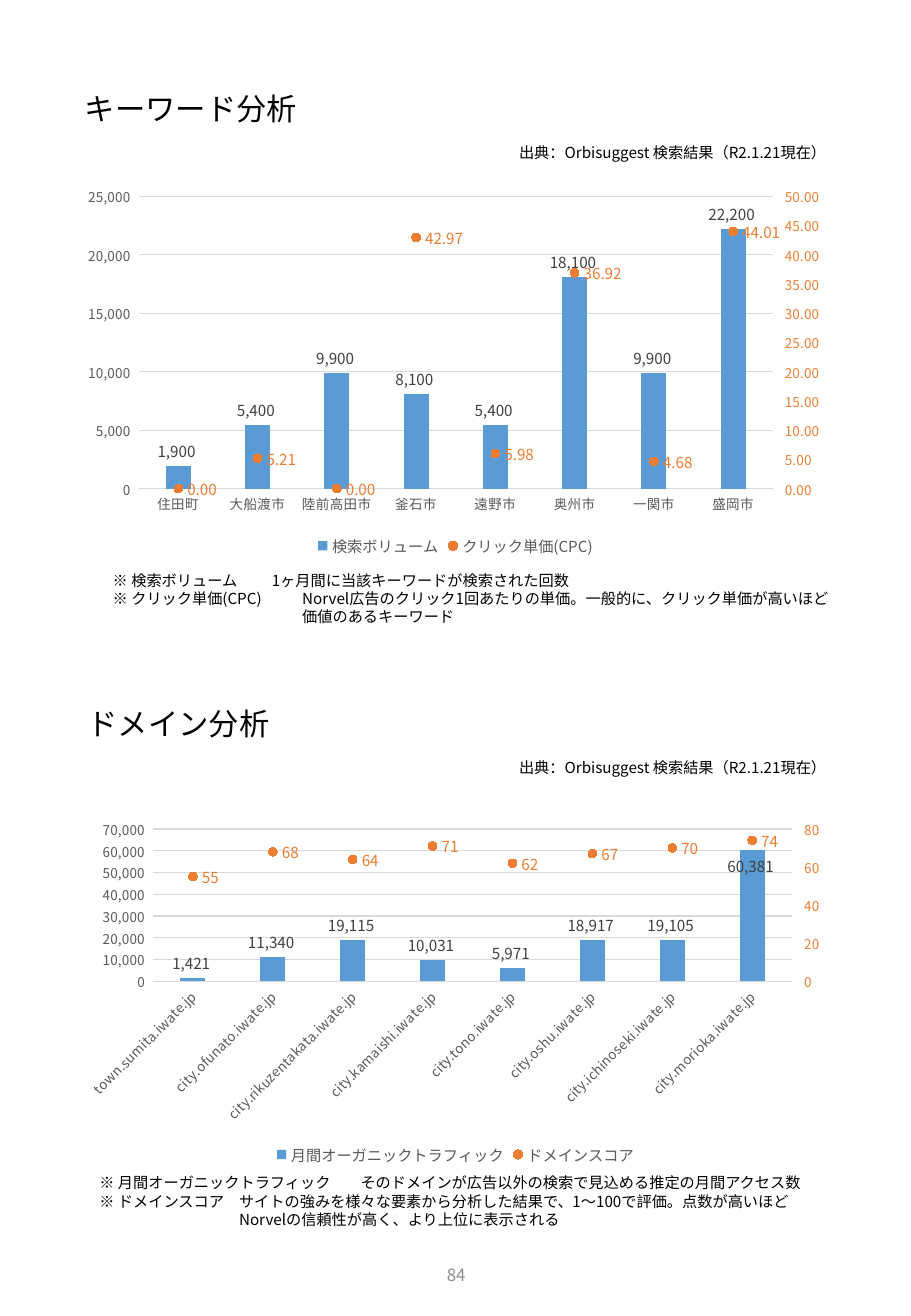
from lxml.etree import SubElement
from pptx import Presentation
from pptx.chart.axis import ValueAxis
from pptx.chart.data import CategoryChartData as Data
from pptx.dml.color import RGBColor
from pptx.enum.chart import XL_CHART_TYPE as Kind, XL_LABEL_POSITION as Spot
from pptx.enum.chart import XL_LEGEND_POSITION as Side, XL_MARKER_STYLE as Mark
from pptx.enum.chart import XL_TICK_MARK as Tick
from pptx.enum.text import MSO_ANCHOR as Anchor, MSO_AUTO_SIZE as Auto, PP_ALIGN as Align
from pptx.oxml import parse_xml
from pptx.oxml.ns import nsdecls, qn
from pptx.util import Pt

PX = 9144
FACE = "Noto Sans CJK JP"
BLACK = RGBColor(0, 0, 0)
DARK = RGBColor(0x40, 0x40, 0x40)
GREY = RGBColor(0x59, 0x59, 0x59)
PALE = RGBColor(0xD9, 0xD9, 0xD9)
FAINT = RGBColor(0x8C, 0x8C, 0x8C)
BLUE = RGBColor(0x5B, 0x9B, 0xD5)
ORANGE = RGBColor(0xED, 0x7D, 0x31)
WHOLE = r"#,##0_);[Red]\(#,##0\)"
CENTS = r"#,##0.00_);[Red]\(#,##0.00\)"
SOURCE = "出典：Orbisuggest 検索結果（R2.1.21現在）"

PARTS = [
    dict(
        title="キーワード分析", head=(60, 70, 630, 43), cite=(402, 113, 288, 26),
        plot=(60, 147, 630, 315), foot=(83, 465, 640, 57),
        cats=["住田町", "大船渡市", "陸前高田市", "釜石市", "遠野市", "奥州市", "一関市", "盛岡市"],
        bars=("検索ボリューム", [1900, 5400, 9900, 8100, 5400, 18100, 9900, 22200]),
        dots=("クリック単価(CPC)", [0, 5.21, 0, 42.97, 5.98, 36.92, 4.68, 44.01]),
        left=(25000, 5000), right=(50, 5), form=CENTS, turn=0, inner=[],
        notes=[
            (131, "※ 検索ボリューム\t1ヶ月間に当該キーワードが検索された回数"),
            (156, "※ クリック単価(CPC)\tNorvel広告のクリック1回あたりの単価。"
                  "一般的に、クリック単価が高いほど\v\t価値のあるキーワード"),
        ],
    ),
    dict(
        title="ドメイン分析", head=(62, 576, 630, 43), cite=(402, 619, 288, 26),
        plot=(60, 668, 630, 295), foot=(72, 961, 640, 57),
        cats=["town.sumita.iwate.jp", "city.ofunato.iwate.jp", "city.rikuzentakata.iwate.jp",
              "city.kamaishi.iwate.jp", "city.tono.iwate.jp", "city.oshu.iwate.jp",
              "city.ichinoseki.iwate.jp", "city.morioka.iwate.jp"],
        bars=("月間オーガニックトラフィック",
              [1421, 11340, 19115, 10031, 5971, 18917, 19105, 60381]),
        dots=("ドメインスコア", [55, 68, 64, 71, 62, 67, 70, 74]),
        left=(70000, 10000), right=(80, 20), form=WHOLE, turn=-45, inner=[7],
        notes=[
            (215, "※ 月間オーガニックトラフィック\tそのドメインが広告以外の検索で見込める推定の月間アクセス数"),
            (115, "※ ドメインスコア\tサイトの強みを様々な要素から分析した結果で、1～100で評価。"
                  "点数が高いほど\v\tNorvelの信頼性が高く、より上位に表示される"),
        ],
    ),
]

LINE = f"""<c:lineChart {nsdecls('c')}><c:grouping val="standard"/><c:varyColors val="0"/>
<c:marker val="1"/><c:axId val="501"/><c:axId val="502"/></c:lineChart>"""
BASE = f"""<c:catAx {nsdecls('c')}><c:axId val="501"/><c:scaling><c:orientation val="minMax"/>
</c:scaling><c:delete val="1"/><c:axPos val="b"/><c:crossAx val="502"/>
<c:crosses val="autoZero"/></c:catAx>"""
RIGHT = f"""<c:valAx {nsdecls('c')}><c:axId val="502"/><c:scaling><c:orientation val="minMax"/>
</c:scaling><c:delete val="0"/><c:axPos val="r"/><c:majorTickMark val="out"/>
<c:minorTickMark val="none"/><c:tickLblPos val="nextTo"/><c:crossAx val="501"/>
<c:crosses val="max"/></c:valAx>"""


def fit(item, **vals):
    """Set each named value on the item."""
    for key, val in vals.items():
        setattr(item, key, val)


def ink(font, size, color):
    """Set face, size and colour of a font."""
    fit(font, name=FACE, size=Pt(size), bold=False)
    font.color.rgb = color
    SubElement(font._rPr, qn("a:ea")).set("typeface", FACE)


def place(shape, box):
    """Move a shape to a box in px."""
    fit(shape, **{k: v * PX for k, v in zip(("left", "top", "width", "height"), box)})


def write(shape, box, rows, size, color=BLACK, align=Align.LEFT, anchor=Anchor.TOP, gap=1.0):
    """Fill a shape with (tab stop, text) rows."""
    place(shape, box)
    frame = shape.text_frame
    fit(frame, word_wrap=True, auto_size=Auto.NONE, vertical_anchor=anchor)
    frame.text = "\n".join(text for _, text in rows)
    for para, (stop, _) in zip(frame.paragraphs, rows):
        fit(para, alignment=align, line_spacing=gap)
        if stop:
            tabs = SubElement(para._p.get_or_add_pPr(), qn("a:tabLst"))
            tab = SubElement(tabs, qn("a:tab"))
            tab.set("pos", str(stop * PX))
            tab.set("algn", "l")
        for run in para.runs:
            ink(run.font, size, color)


def scale(axis, span, form, color):
    """Format a value axis."""
    top, step = span
    fit(axis, minimum_scale=0, maximum_scale=top, major_unit=step)
    fit(axis.tick_labels, number_format=form, number_format_is_linked=False)
    ink(axis.tick_labels.font, 8, color)
    axis.format.line.fill.background()


def label(series, form, color, spot):
    """Show the values of a series."""
    tags = series.data_labels
    fit(tags, show_value=True, number_format=form, number_format_is_linked=False, position=spot)
    ink(tags.font, 9, color)


def draw(slide, part):
    """Add a column chart with dots on a second axis."""
    data = Data(number_format=WHOLE)
    data.categories = part["cats"]
    data.add_series(*part["bars"])
    data.add_series(*part["dots"], number_format=part["form"])
    box = [n * PX for n in part["plot"]]
    chart = slide.shapes.add_chart(Kind.COLUMN_CLUSTERED, *box, data).chart
    fit(chart, has_title=False, has_legend=True)
    fit(chart.legend, position=Side.BOTTOM, include_in_layout=False)
    ink(chart.font, 10, BLACK)
    ink(chart.legend.font, 9, GREY)

    cat, val = chart.category_axis, chart.value_axis
    fit(cat, major_tick_mark=Tick.NONE)
    fit(val, major_tick_mark=Tick.NONE, has_major_gridlines=True)
    ink(cat.tick_labels.font, 8, GREY)
    for line in (cat.format.line, val.major_gridlines.format.line):
        line.color.rgb = PALE
        line.width = Pt(0.75)
    scale(val, part["left"], WHOLE, GREY)
    root = chart._chartSpace
    if part["turn"]:
        body = root.xpath(".//c:catAx/c:txPr/a:bodyPr")[0]
        body.set("rot", str(part["turn"] * 60000))

    group = root.xpath(".//c:barChart")[0]
    moved = group.findall(qn("c:ser"))[1]
    for flag in moved.findall(qn("c:invertIfNegative")):
        moved.remove(flag)
    dots = parse_xml(LINE)
    dots.insert(2, moved)
    group.addnext(dots)
    last = root.xpath(".//c:valAx")[0]
    right = parse_xml(RIGHT)
    last.addnext(right)
    right.addnext(parse_xml(BASE))
    scale(ValueAxis(right), part["right"], part["form"], ORANGE)

    cols, line = chart.plots
    fit(cols, gap_width=219, overlap=-27, vary_by_categories=False)
    bar, dot = cols.series[0], line.series[0]
    bar.format.fill.solid()
    bar.format.fill.fore_color.rgb = BLUE
    label(bar, WHOLE, DARK, Spot.OUTSIDE_END)
    for spot in part["inner"]:
        tag = bar.points[spot].data_label
        ink(tag.font, 9, DARK)
        tag.position = Spot.INSIDE_END
    dot.smooth = False
    dot.format.line.fill.background()
    fit(dot.marker, style=Mark.CIRCLE, size=5)
    dot.marker.format.fill.solid()
    dot.marker.format.fill.fore_color.rgb = ORANGE
    dot.marker.format.line.color.rgb = ORANGE
    label(dot, part["form"], ORANGE, Spot.RIGHT)


def main():
    """Build the slide."""
    deck = Presentation()
    fit(deck, slide_width=750 * PX, slide_height=1083 * PX)
    slide = deck.slides.add_slide(deck.slide_layouts[5])

    def new():
        return slide.shapes.add_textbox(0, 0, PX, PX)

    for part in PARTS:
        head = slide.shapes.title if part is PARTS[-1] else new()
        write(head, part["head"], [(0, part["title"])], 18, anchor=Anchor.MIDDLE, gap=0.9)
        write(new(), part["cite"], [(0, SOURCE)], 9, align=Align.RIGHT)
        draw(slide, part)
        write(new(), part["foot"], part["notes"], 9)
    write(new(), (291, 1036, 169, 26), [(0, "84")], 10, FAINT, Align.CENTER, Anchor.MIDDLE)
    deck.save("out.pptx")


if __name__ == "__main__":
    main()
